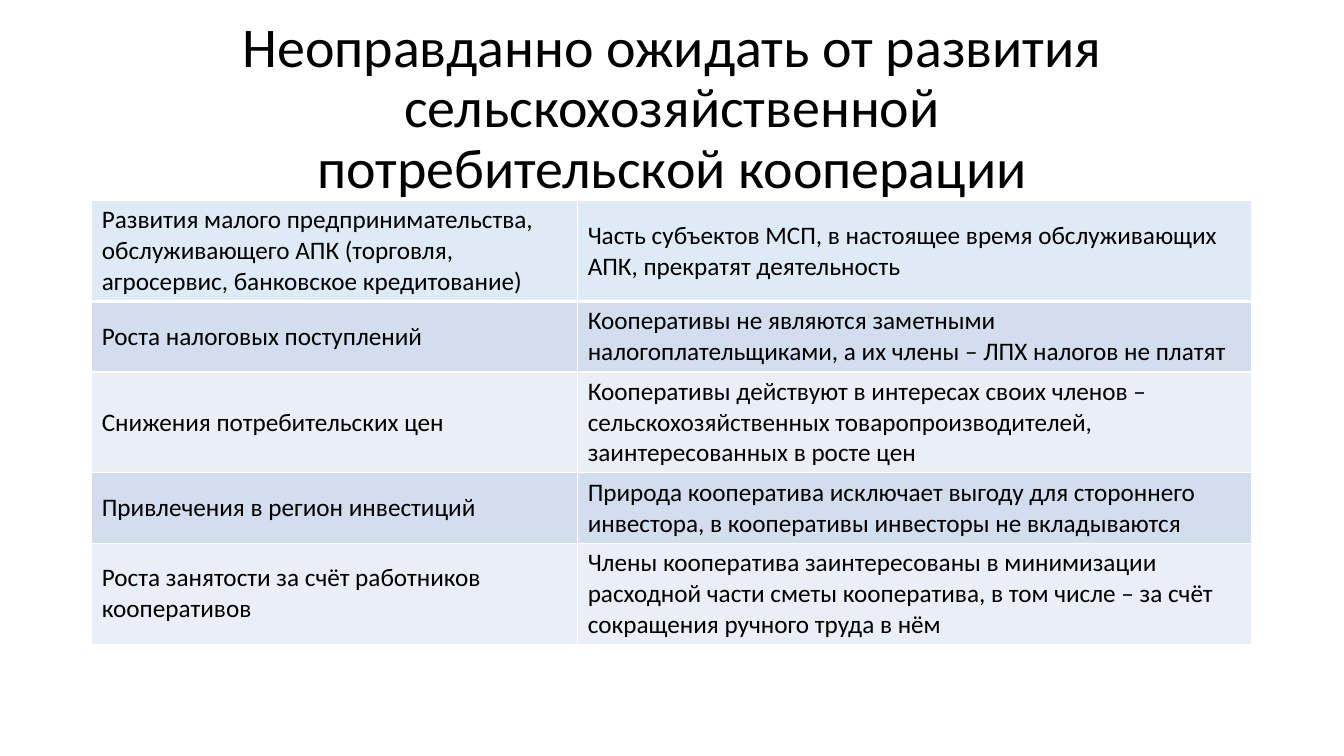
from lxml.etree import SubElement
from pptx import Presentation
from pptx.dml.color import RGBColor
from pptx.enum.text import MSO_ANCHOR, MSO_AUTO_SIZE, PP_ALIGN
from pptx.oxml import parse_xml
from pptx.oxml.ns import nsdecls, qn
from pptx.util import Inches, Pt

COLORS = {
    "text": "000000",
    "border": "FFFFFF",
    "header": "DEEBF7",
    "dark_band": "D2DEEE",
    "light_band": "EAEEF7",
}
TITLE = ("Неоправданно ожидать от развития\vсельскохозяйственной\v"
         "потребительской кооперации")
EXPECTATIONS = [
    ("Развития малого предпринимательства, обслуживающего АПК "
     "(торговля, агросервис, банковское кредитование)",
     "Часть субъектов МСП, в настоящее время обслуживающих АПК, "
     "прекратят деятельность"),
    ("Роста налоговых поступлений",
     "Кооперативы не являются заметными\n"
     "налогоплательщиками, а их члены – ЛПХ налогов не платят"),
    ("Снижения потребительских цен",
     "Кооперативы действуют в интересах своих членов – "
     "сельскохозяйственных товаропроизводителей,\n"
     "заинтересованных в росте цен"),
    ("Привлечения в регион инвестиций",
     "Природа кооператива исключает выгоду для стороннего инвестора, "
     "в кооперативы инвесторы не вкладываются"),
    ("Роста занятости за счёт работников кооперативов",
     "Члены кооператива заинтересованы в минимизации расходной части "
     "сметы кооператива, в том числе – за счёт сокращения ручного труда в нём"),
]
COLUMN_WIDTHS = [4.82, 6.68]
ROW_HEIGHTS = [1, 0.7, 1, 0.7, 1]


class SlideBuilder:
    def __init__(self, slide, font="Calibri"):
        self.slide = slide
        self.font = font

    def style_text(self, frame, size):
        for paragraph in frame.paragraphs:
            paragraph.font.name = self.font
            paragraph.font.size = Pt(size)
            paragraph.font.bold = False
            paragraph.font.color.rgb = RGBColor.from_string(COLORS["text"])

    def add_title(self, text, left, top, width, height):
        title = self.slide.shapes.title
        title.left, title.top = Inches(left), Inches(top)
        title.width, title.height = Inches(width), Inches(height)
        frame = title.text_frame
        frame.text = text
        frame.word_wrap = True
        frame.auto_size = MSO_AUTO_SIZE.NONE
        frame.vertical_anchor = MSO_ANCHOR.TOP
        frame.margin_left = frame.margin_right = frame.margin_bottom = 0
        frame.margin_top = Inches(0.08)
        self.style_text(frame, 40)
        paragraph = frame.paragraphs[0]
        paragraph.alignment = PP_ALIGN.CENTER
        paragraph.line_spacing = 0.9

    def add_table(self, rows, left, top, column_widths, row_heights):
        table = self.slide.shapes.add_table(
            len(rows), len(column_widths), Inches(left), Inches(top),
            Inches(sum(column_widths)), Inches(sum(row_heights))).table
        table.first_row = table.horz_banding = False
        for column, width in zip(table.columns, column_widths):
            column.width = Inches(width)
        for index, (row, height, texts) in enumerate(
                zip(table.rows, row_heights, rows)):
            row.height = Inches(height)
            band = "dark_band" if index % 2 else "light_band"
            fill = band if index else "header"
            borders = {"lnL": 1, "lnR": 1,
                       "lnT": 3 if index == 1 else 1,
                       "lnB": 3 if index == 0 else 1}
            for cell, text in zip(row.cells, texts):
                self.fill_cell(cell, text, fill, borders)

    def fill_cell(self, cell, text, fill, borders):
        cell.text = text
        cell.vertical_anchor = MSO_ANCHOR.MIDDLE
        cell.margin_left = Inches(0.1)
        cell.margin_right = 0
        cell.margin_top = cell.margin_bottom = Inches(0.03)
        cell.fill.solid()
        cell.fill.fore_color.rgb = RGBColor.from_string(COLORS[fill])
        self.style_text(cell.text_frame, 18)
        properties = cell._tc.get_or_add_tcPr()
        for position, (side, width) in enumerate(borders.items()):
            line = parse_xml(f'<a:{side} {nsdecls("a")} w="{Pt(width)}"/>')
            solid = SubElement(line, qn("a:solidFill"))
            SubElement(solid, qn("a:srgbClr"), val=COLORS["border"])
            properties.insert(position, line)


def main():
    presentation = Presentation()
    presentation.slide_width = Inches(13.33)
    presentation.slide_height = Inches(7.5)
    title_only = presentation.slide_layouts[5]
    builder = SlideBuilder(presentation.slides.add_slide(title_only))
    builder.add_title(TITLE, 1.93, 0.11, 9.47, 1.89)
    builder.add_table(EXPECTATIONS, 0.91, 1.99, COLUMN_WIDTHS, ROW_HEIGHTS)
    presentation.save("out.pptx")


if __name__ == "__main__":
    main()
